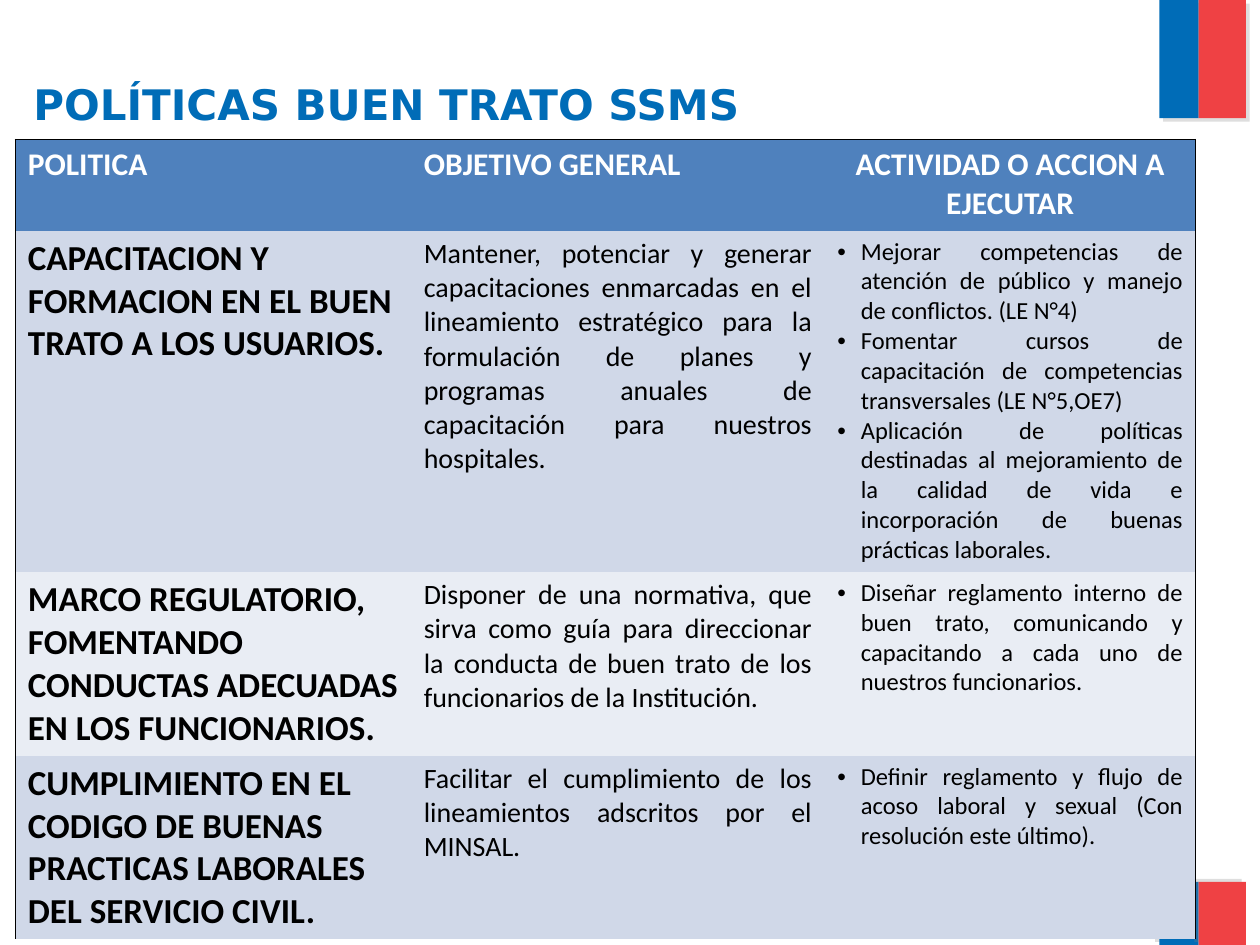
from dataclasses import dataclass

from lxml import etree
from pptx import Presentation
from pptx import util as u
from pptx.dml.color import RGBColor
from pptx.enum import shapes, text
from pptx.oxml import ns

Pt = u.Pt
LEFT, CENTER, JUSTIFY = text.PP_ALIGN.LEFT, text.PP_ALIGN.CENTER, text.PP_ALIGN.JUSTIFY


@dataclass(frozen=True)
class Theme:
    blue: str = "006CB7"
    red: str = "EF4144"
    header: str = "4F81BD"
    bands: tuple[str, str] = ("D0D8E8", "E9EDF4")
    black: str = "000000"
    white: str = "FFFFFF"
    shadow: str = "808080"
    title_font: str = "DejaVu Sans"
    table_font: str = "Calibri"
    title_size: int = 24
    header_size: int = 18
    policy_size: int = 20
    goal_size: int = 16
    action_size: int = 14


@dataclass(frozen=True)
class FlagBlock:
    left: float
    top: float
    width: float
    height: float
    color: str
    shadow_angle: int


@dataclass(frozen=True)
class Policy:
    name: str
    goal: str
    actions: tuple[str, ...]
    height: float


THEME = Theme()
COLUMN_WIDTHS = (226.25, 236.25, 212)
HEADER_HEIGHT = 52
BULLET_INDENT = 13.5
HEADERS = (
    ("POLITICA", LEFT),
    ("OBJETIVO GENERAL", LEFT),
    ("ACTIVIDAD O ACCION A EJECUTAR", CENTER),
)
FLAG = (
    FlagBlock(662.5, -0.5, 22.5, 68, THEME.blue, 45),
    FlagBlock(685, 0, 27, 67.5, THEME.red, 45),
    FlagBlock(662.5, 504, 22.5, 36, THEME.blue, 215),
    FlagBlock(685, 504, 27, 36, THEME.red, 215),
)
POLICIES = (
    Policy(
        "CAPACITACION Y FORMACION EN EL BUEN TRATO A LOS USUARIOS.",
        "Mantener, potenciar y generar capacitaciones enmarcadas en el lineamiento estratégico "
        "para la formulación de planes y programas anuales de capacitación para nuestros hospitales.",
        (
            "Mejorar competencias de atención de público y manejo de conflictos. (LE N°4)",
            "Fomentar cursos de capacitación de competencias transversales (LE N°5,OE7)",
            "Aplicación de políticas destinadas al mejoramiento de la calidad de vida "
            "e incorporación de buenas prácticas laborales.",
        ),
        195,
    ),
    Policy(
        "MARCO REGULATORIO, FOMENTANDO CONDUCTAS ADECUADAS EN LOS FUNCIONARIOS.",
        "Disponer de una normativa, que sirva como guía para direccionar la conducta "
        "de buen trato de los funcionarios de la Institución.",
        (
            "Diseñar reglamento interno de buen trato, comunicando y capacitando "
            "a cada uno de nuestros funcionarios.",
        ),
        105,
    ),
    Policy(
        "CUMPLIMIENTO EN EL CODIGO DE BUENAS PRACTICAS LABORALES DEL SERVICIO CIVIL.",
        "Facilitar el cumplimiento de los lineamientos adscritos por el MINSAL.",
        ("Definir reglamento y flujo de acoso laboral y sexual (Con resolución este último).",),
        105,
    ),
)


def add_node(parent, tag: str, **attributes):
    return etree.SubElement(parent, ns.qn(tag), {k: str(v) for k, v in attributes.items()})


def write(frame, *lines: str, size: int, color: str = THEME.black, font: str = THEME.table_font,
          bold: bool = False, align=LEFT, bullet: bool = False) -> None:
    """Fill a text frame with one paragraph per line."""
    frame.word_wrap = True
    for index, line in enumerate(lines):
        para = frame.add_paragraph() if index else frame.paragraphs[0]
        para.alignment = align
        if bullet:
            properties = para._p.get_or_add_pPr()
            properties.set("marL", str(Pt(BULLET_INDENT)))
            properties.set("indent", str(-Pt(BULLET_INDENT)))
            add_node(properties, "a:buFont", typeface="Arial")
            add_node(properties, "a:buChar", char="•")
        span = para.add_run()
        span.text = line
        span.font.name, span.font.size, span.font.bold = font, Pt(size), bold
        span.font.color.rgb = RGBColor.from_string(color)


def draw_flag_block(page, block: FlagBlock) -> None:
    box = page.shapes.add_shape(shapes.MSO_SHAPE.RECTANGLE, Pt(block.left), Pt(block.top),
                                Pt(block.width), Pt(block.height))
    box.fill.solid()
    box.fill.fore_color.rgb = RGBColor.from_string(block.color)
    box.line.fill.background()
    box.shadow.inherit = False
    effects = box._element.spPr.find(ns.qn("a:effectLst"))
    shadow = add_node(effects, "a:outerShdw", dist=Pt(3), dir=block.shadow_angle * 60000,
                      algn="ctr", rotWithShape=0)
    add_node(add_node(shadow, "a:srgbClr", val=THEME.shadow), "a:alpha", val=25000)


def draw_title(page) -> None:
    box = page.shapes.add_textbox(Pt(12), Pt(12), Pt(637), Pt(61.5))
    frame = box.text_frame
    frame.vertical_anchor = text.MSO_ANCHOR.BOTTOM
    frame.margin_bottom = 0
    write(frame, "POLÍTICAS BUEN TRATO SSMS", size=THEME.title_size, color=THEME.blue,
          font=THEME.title_font, bold=True)


def style_cell(cell, fill: str, edges: set[str]) -> None:
    """Set the fill, draw the named edges (L, R, T, B) and clear the others."""
    properties = cell._tc.get_or_add_tcPr()
    for edge in "LRTB":
        if edge in edges:
            line = add_node(properties, f"a:ln{edge}", w=Pt(1))
            add_node(add_node(line, "a:solidFill"), "a:srgbClr", val=THEME.black)
        else:
            add_node(add_node(properties, f"a:ln{edge}", w=0), "a:noFill")
    cell.fill.solid()
    cell.fill.fore_color.rgb = RGBColor.from_string(fill)


def draw_table(page) -> None:
    heights = [HEADER_HEIGHT] + [policy.height for policy in POLICIES]
    table = page.shapes.add_table(len(heights), len(COLUMN_WIDTHS), Pt(8.75), Pt(79.75),
                                  Pt(sum(COLUMN_WIDTHS)), Pt(sum(heights))).table
    for column, width in zip(table.columns, COLUMN_WIDTHS):
        column.width = Pt(width)
    for index, height in enumerate(heights):
        table.rows[index].height = Pt(height)
        fill = THEME.bands[(index - 1) % 2] if index else THEME.header
        for cell, side in zip(table.rows[index].cells, ("L", "", "R")):
            style_cell(cell, fill, {side} if index else {side, "T"})

    for cell, (label, align) in zip(table.rows[0].cells, HEADERS):
        write(cell.text_frame, label, size=THEME.header_size, color=THEME.white,
              bold=True, align=align)
    for index, policy in enumerate(POLICIES, start=1):
        name, goal, actions = (cell.text_frame for cell in table.rows[index].cells)
        write(name, policy.name, size=THEME.policy_size, bold=True)
        write(goal, policy.goal, size=THEME.goal_size, align=JUSTIFY)
        write(actions, *policy.actions, size=THEME.action_size, align=JUSTIFY, bullet=True)


def main() -> None:
    deck = Presentation()
    deck.slide_width, deck.slide_height = Pt(720), Pt(540)
    page = deck.slides.add_slide(deck.slide_layouts[6])
    for block in FLAG:
        draw_flag_block(page, block)
    draw_title(page)
    draw_table(page)
    deck.save("out.pptx")


if __name__ == "__main__":
    main()
